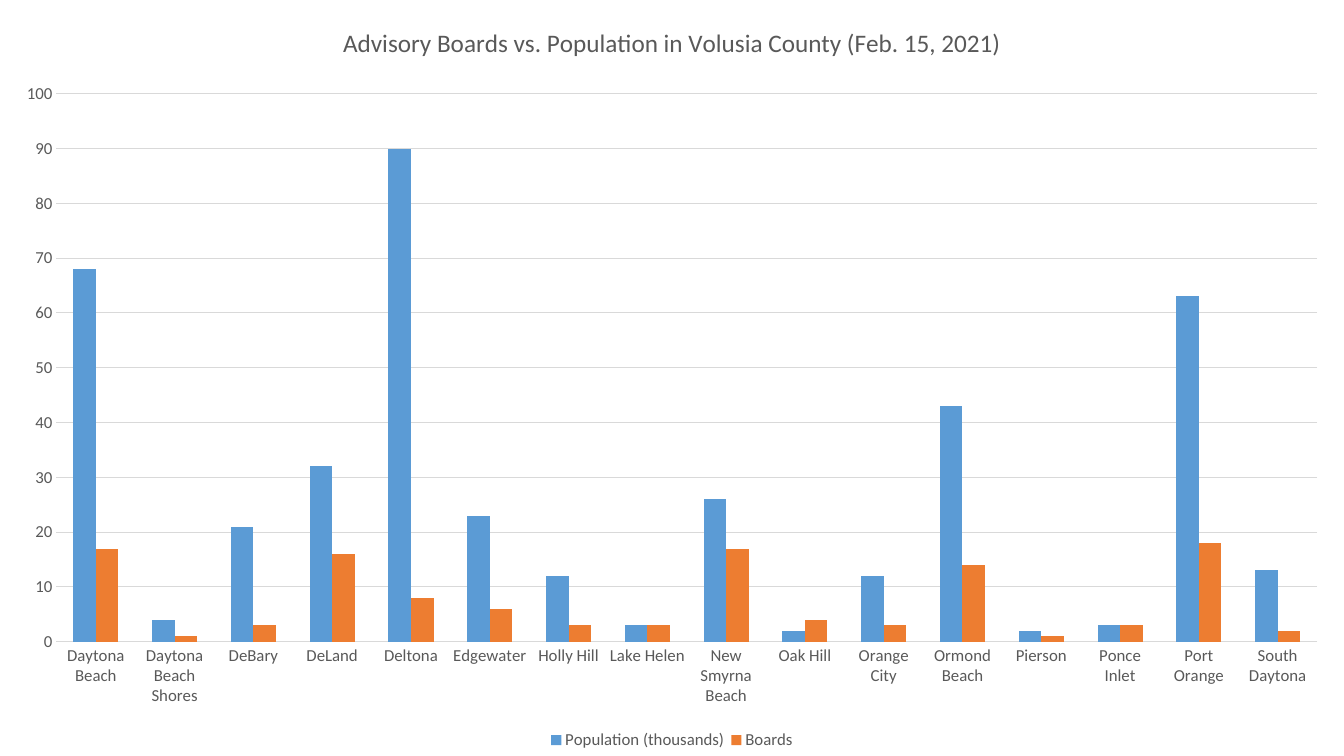
from lxml.etree import SubElement
from pptx import Presentation
from pptx.chart.data import CategoryChartData
from pptx.dml.color import RGBColor
from pptx.enum.chart import XL_CHART_TYPE, XL_LEGEND_POSITION, XL_TICK_MARK
from pptx.oxml.ns import qn
from pptx.util import Inches, Pt

FONT = "Calibri"
GRAY, GRID, BLUE, ORANGE = "595959", "D9D9D9", "5B9BD5", "ED7D31"
TITLE = "Advisory Boards vs. Population in Volusia County (Feb. 15, 2021)"

# City: population in thousands, number of advisory boards
CITIES = {
    "Daytona Beach": (68, 17),
    "Daytona Beach Shores": (4, 1),
    "DeBary": (21, 3),
    "DeLand": (32, 16),
    "Deltona": (90, 8),
    "Edgewater": (23, 6),
    "Holly Hill": (12, 3),
    "Lake Helen": (3, 3),
    "New Smyrna Beach": (26, 17),
    "Oak Hill": (2, 4),
    "Orange City": (12, 3),
    "Ormond Beach": (43, 14),
    "Pierson": (2, 1),
    "Ponce Inlet": (3, 3),
    "Port Orange": (63, 18),
    "South Daytona": (13, 2),
}


def rgb(color):
    return RGBColor.from_string(color)


def style_font(font, size):
    font.name = FONT
    font.size = Pt(size)
    font.bold = False
    font.color.rgb = rgb(GRAY)


def place(element, index, inner=False, **shares):
    """Fix a chart part at shares (x, y, w, h) of the chart's size."""
    for old in element.findall(qn("c:layout")):
        element.remove(old)
    layout = SubElement(element, qn("c:layout"))
    element.insert(index, layout)
    manual = SubElement(layout, qn("c:manualLayout"))
    if inner:
        SubElement(manual, qn("c:layoutTarget")).set("val", "inner")
    for side in "xy":
        SubElement(manual, qn(f"c:{side}Mode")).set("val", "edge")
    for side, share in shares.items():
        SubElement(manual, qn(f"c:{side}")).set("val", str(share))


def style_axes(chart):
    for axis in (chart.category_axis, chart.value_axis):
        axis.major_tick_mark = axis.minor_tick_mark = XL_TICK_MARK.NONE
        axis.format.line.fill.background()
        style_font(axis.tick_labels.font, 12)
    values = chart.value_axis
    values.minimum_scale, values.maximum_scale, values.major_unit = 0, 100, 10
    grid = values.major_gridlines.format.line
    grid.color.rgb = rgb(GRID)
    grid.width = Pt(0.75)


def add_city_chart(s, left, top, width, height):
    data = CategoryChartData()
    data.categories = list(CITIES)
    populations, boards = zip(*CITIES.values())
    data.add_series("Population (thousands)", populations)
    data.add_series("Boards", boards)
    chart = s.shapes.add_chart(
        XL_CHART_TYPE.COLUMN_CLUSTERED, left, top, width, height, data).chart
    chart.font.name = FONT
    chart.font.size = Pt(10)

    # Title
    p = chart.chart_title.text_frame.paragraphs[0]
    p.text = TITLE
    style_font(p.font, 18)
    chart.chart_title.include_in_layout = False

    # Columns
    plot = chart.plots[0]
    plot.gap_width, plot.overlap, plot.vary_by_categories = 150, 0, False
    for series, color in zip(plot.series, (BLUE, ORANGE)):
        series.format.fill.solid()
        series.format.fill.fore_color.rgb = rgb(color)
    style_axes(chart)

    # Legend
    chart.has_legend = True
    legend = chart.legend
    legend.position = XL_LEGEND_POSITION.BOTTOM
    legend.include_in_layout = False
    style_font(legend.font, 12)

    # Shares of the chart's box
    plot_area = chart.element.find(".//" + qn("c:plotArea"))
    place(plot_area, 0, inner=True, x=0.042, y=0.124, w=0.938, h=0.725)
    legend_box = chart.element.find(".//" + qn("c:legend"))
    place(legend_box, 1, x=0.405, y=0.965, w=0.19, h=0.035)


def main():
    prs = Presentation()
    prs.slide_width, prs.slide_height = Inches(13.33), Inches(7.5)
    s = prs.slides.add_slide(prs.slide_layouts[6])
    add_city_chart(s, 0, 0, prs.slide_width, prs.slide_height)
    prs.save("out.pptx")


if __name__ == "__main__":
    main()
